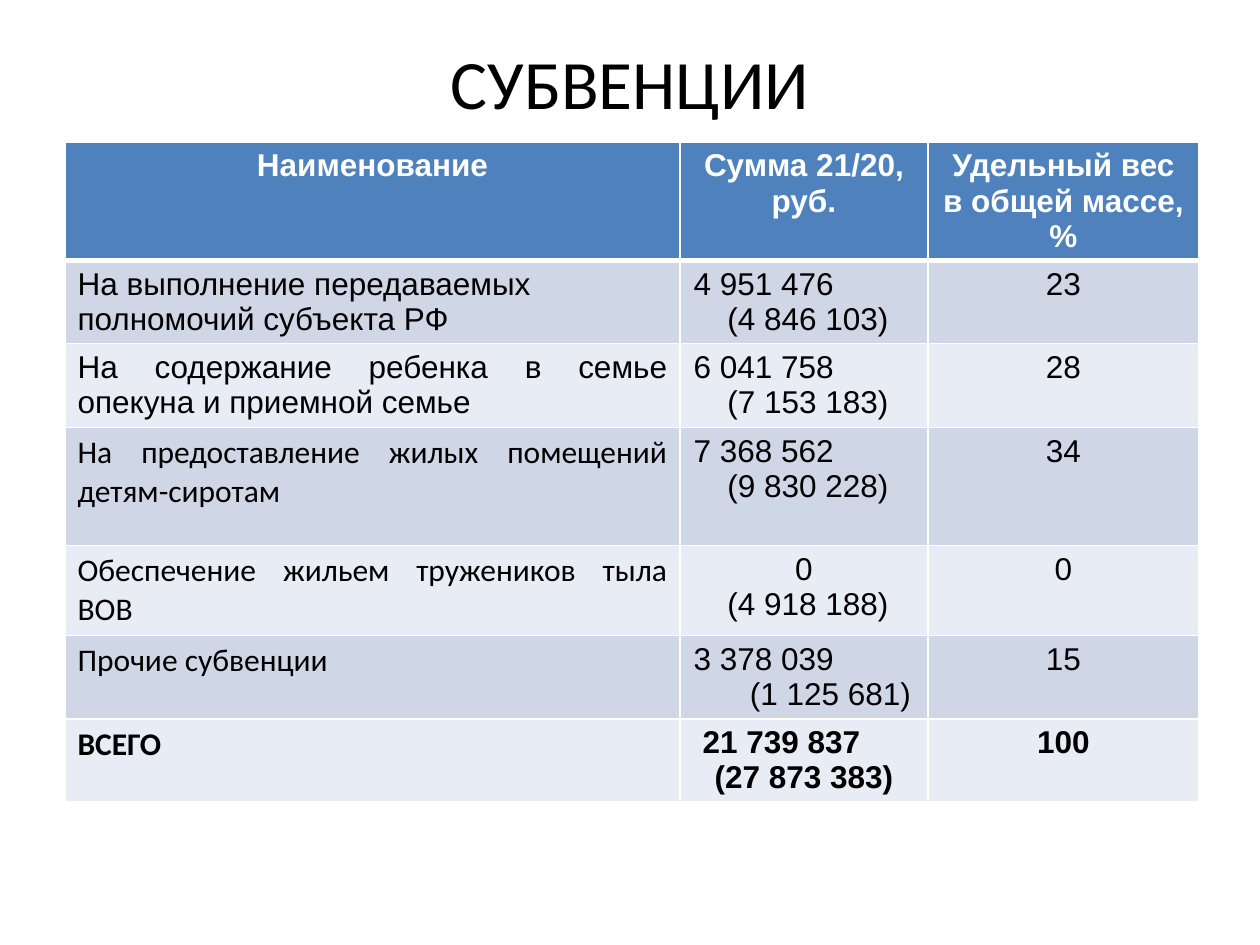
from dataclasses import dataclass

from pptx import Presentation
from pptx.dml.color import RGBColor
from pptx.enum.text import MSO_ANCHOR, MSO_AUTO_SIZE, PP_ALIGN
from pptx.oxml.ns import qn
from pptx.util import Emu, Pt
from lxml.etree import SubElement


@dataclass(frozen=True)
class Theme:
    header_fill: str = "4F81BD"
    band_fills: tuple[str, str] = ("CFD7E7", "E8ECF4")
    light: str = "FFFFFF"
    dark: str = "000000"
    title_size: float = 39.6
    table_size: float = 18
    heading_font: str = "Calibri"
    table_font: str = "Arial"
    thin_border: int = 1
    header_border: int = 3


@dataclass(frozen=True)
class Line:
    text: str
    align: PP_ALIGN = PP_ALIGN.CENTER
    indent: int = 0  # px


@dataclass(frozen=True)
class Subvention:
    name: Line
    amount: Line
    previous_amount: Line
    share: str
    height: int  # px
    name_font: str = "Calibri"
    bold: bool = False


THEME = Theme()
PIXELS_PER_INCH = 126
LEFT, CENTER, JUSTIFY = PP_ALIGN.LEFT, PP_ALIGN.CENTER, PP_ALIGN.JUSTIFY
TABLE_LEFT, TABLE_TOP = 65, 142
COLUMN_WIDTHS = (615, 248, 271)
HEADER_HEIGHT = 118
HEADERS = ("Наименование", "Сумма 21/20, руб.", "Удельный вес в общей массе, %")

SUBVENTIONS = (
    Subvention(Line("На выполнение передаваемых полномочий субъекта РФ", LEFT),
               Line("4 951 476", LEFT, 1), Line("(4 846 103)", indent=8), "23", 83, "Arial"),
    Subvention(Line("На содержание ребенка в семье опекуна и приемной семье", JUSTIFY),
               Line("6 041 758", LEFT, 1), Line("(7 153 183)", indent=8), "28", 84, "Arial"),
    Subvention(Line("На предоставление жилых помещений детям-сиротам", JUSTIFY),
               Line("7 368 562", LEFT, 1), Line("(9 830 228)", indent=8), "34", 118),
    Subvention(Line("Обеспечение жильем тружеников тыла ВОВ", JUSTIFY),
               Line("0"), Line("(4 918 188)", indent=8), "0", 90),
    Subvention(Line("Прочие субвенции", JUSTIFY),
               Line("3 378 039", LEFT, 1), Line("(1 125 681)", indent=53), "15", 83),
    Subvention(Line("ВСЕГО", JUSTIFY),
               Line("21 739 837", LEFT, 10), Line("(27 873 383)"), "100", 82, bold=True),
)


def px(length: int) -> Emu:
    return Emu(round(length * 914400 / PIXELS_PER_INCH))


def write_text(text_frame, *lines: Line, font: str = THEME.table_font,
               size: float = THEME.table_size, color: str = THEME.dark,
               bold: bool = False) -> None:
    for index, line in enumerate(lines):
        paragraph = text_frame.paragraphs[0] if index == 0 else text_frame.add_paragraph()
        paragraph.alignment = line.align
        if line.indent:
            paragraph._p.get_or_add_pPr().set("marL", str(px(line.indent)))
        run = paragraph.add_run()
        run.text = line.text
        run.font.name = font
        run.font.size = Pt(size)
        run.font.bold = bold
        run.font.color.rgb = RGBColor.from_string(color)


def style_cell(cell, fill: str, top: int = THEME.thin_border,
               bottom: int = THEME.thin_border) -> None:
    properties = cell._tc.get_or_add_tcPr()
    widths = {"lnL": THEME.thin_border, "lnR": THEME.thin_border, "lnT": top, "lnB": bottom}
    # Borders come before the fill in the cell properties
    for tag, width in widths.items():
        border = SubElement(properties, qn(f"a:{tag}"), w=str(Pt(width)))
        solid_fill = SubElement(border, qn("a:solidFill"))
        SubElement(solid_fill, qn("a:srgbClr"), val=THEME.light)
    cell.fill.solid()
    cell.fill.fore_color.rgb = RGBColor.from_string(fill)


def add_title(slide, text: str) -> None:
    title = slide.shapes.title
    title.left, title.top, title.width, title.height = map(px, (63, 38, 1134, 87))
    title.text_frame.auto_size = MSO_AUTO_SIZE.NONE
    title.text_frame.vertical_anchor = MSO_ANCHOR.MIDDLE
    write_text(title.text_frame, Line(text), font=THEME.heading_font, size=THEME.title_size)


def add_subvention_table(slide) -> None:
    heights = (HEADER_HEIGHT, *(subvention.height for subvention in SUBVENTIONS))
    table = slide.shapes.add_table(
        len(heights), len(COLUMN_WIDTHS), px(TABLE_LEFT), px(TABLE_TOP),
        px(sum(COLUMN_WIDTHS)), px(sum(heights))).table
    for column, width in zip(table.columns, COLUMN_WIDTHS):
        column.width = px(width)
    for row, height in zip(table.rows, heights):
        row.height = px(height)

    # Header row
    for cell, header in zip(table.rows[0].cells, HEADERS):
        style_cell(cell, THEME.header_fill, bottom=THEME.header_border)
        write_text(cell.text_frame, Line(header), color=THEME.light, bold=True)

    # Body rows in alternating bands
    for index, subvention in enumerate(SUBVENTIONS):
        name, amount, share = cells = tuple(table.rows[index + 1].cells)
        top = THEME.header_border if index == 0 else THEME.thin_border
        for cell in cells:
            style_cell(cell, THEME.band_fills[index % 2], top=top)
        write_text(name.text_frame, subvention.name,
                   font=subvention.name_font, bold=subvention.bold)
        write_text(amount.text_frame, subvention.amount, subvention.previous_amount,
                   bold=subvention.bold)
        write_text(share.text_frame, Line(subvention.share), bold=subvention.bold)


def main() -> None:
    presentation = Presentation()
    presentation.slide_width, presentation.slide_height = px(1260), px(945)
    slide = presentation.slides.add_slide(presentation.slide_layouts[5])
    add_title(slide, "СУБВЕНЦИИ")
    add_subvention_table(slide)
    presentation.save("out.pptx")


if __name__ == "__main__":
    main()
